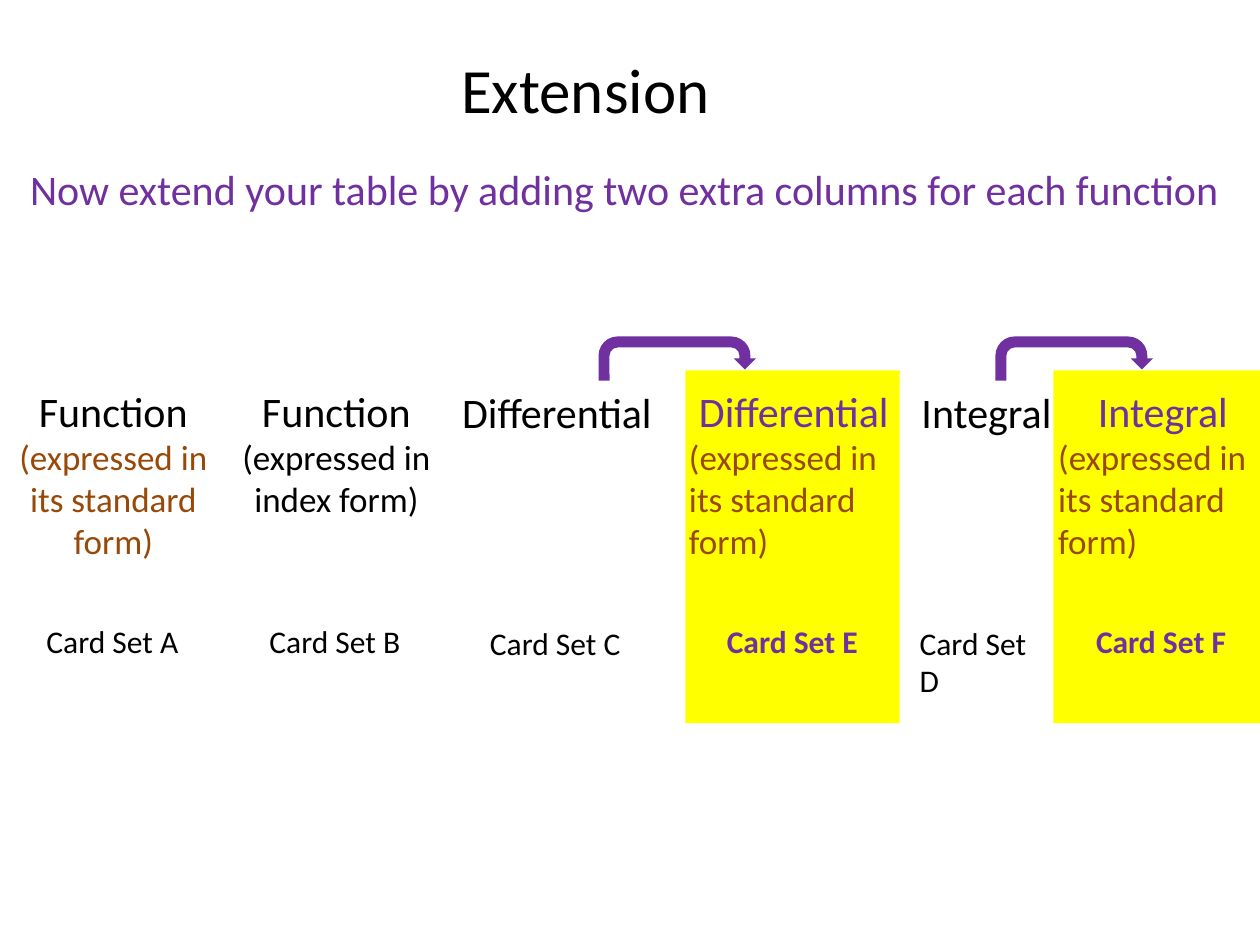
from pptx import Presentation
from pptx.dml.color import RGBColor
from pptx.enum.shapes import MSO_SHAPE
from pptx.enum.text import MSO_ANCHOR, MSO_AUTO_SIZE, PP_ALIGN
from pptx.util import Inches, Pt

RECT, UTURN = MSO_SHAPE.RECTANGLE, MSO_SHAPE.U_TURN_ARROW
LEFT, CENTER = PP_ALIGN.LEFT, PP_ALIGN.CENTER
TOP = MSO_ANCHOR.TOP
NO_FIT, GROW = MSO_AUTO_SIZE.NONE, MSO_AUTO_SIZE.SHAPE_TO_FIT_TEXT
BLACK, PURPLE, BROWN, YELLOW = "000000", "7030A0", "984807", "FFFF00"


def rgb(color):
    return RGBColor.from_string(color)


def write(sp, lines, wrap):
    """Fill a shape with (text, size, colour, alignment, bold) lines."""
    tf = sp.text_frame
    tf.word_wrap = wrap
    tf.vertical_anchor = TOP
    for i, (text, size, color, align, bold) in enumerate(lines):
        p = tf.add_paragraph() if i else tf.paragraphs[0]
        p.text = text
        p.alignment = align
        p.font.name = "Calibri"
        p.font.size = Pt(size)
        p.font.bold = bold
        p.font.color.rgb = rgb(color)
    return tf


prs = Presentation()
prs.slide_width, prs.slide_height = Inches(10), Inches(7.5)
s = prs.slides.add_slide(prs.slide_layouts[5])

# Title
title = s.shapes.title
title.left, title.top = Inches(3.56), Inches(0.35)
title.width, title.height = Inches(2.19), Inches(0.71)
write(title, [("Extension", 36, BLACK, LEFT, False)], False).auto_size = NO_FIT

# Highlights behind the new columns, then arrows leading to them
blocks = [(RECT, x, 2.94, 1.7, 2.8, YELLOW) for x in (5.44, 8.36)]
blocks += [(UTURN, x, 2.67, 1.25, 0.35, PURPLE) for x in (4.75, 7.9)]
for kind, x, y, w, h, color in blocks:
    sp = s.shapes.add_shape(kind, Inches(x), Inches(y), Inches(w), Inches(h))
    sp.shadow.inherit = False
    sp.fill.solid()
    sp.fill.fore_color.rgb = rgb(color)
    sp.line.fill.background()

# Instruction
sp = s.shapes.add_textbox(Inches(0.14), Inches(1.25), Inches(9.72), Inches(0.5))
instruction = "Now extend your table by adding two extra columns for each function"
write(sp, [(instruction, 24, PURPLE, LEFT, False)], False).auto_size = GROW

# Columns: left, top, heading, form, form colour, form alignment, card set, new
STANDARD = "(expressed in its standard form)"
INDEX = "(expressed in index form)"
columns = [
    (-0.03, 3.01, "Function", STANDARD, BROWN, CENTER, "A", False),
    (1.74, 3.01, "Function", INDEX, BLACK, CENTER, "B", False),
    (3.49, 3.02, "Differential", None, None, None, "C", False),
    (5.37, 3.01, "Differential", STANDARD, BROWN, LEFT, "E", True),
    (6.9, 3.02, "Integral", None, None, None, "D", False),
    (8.3, 3.01, "Integral", STANDARD, BROWN, LEFT, "F", True),
]
for x, y, heading, form, form_color, align, card, new in columns:
    color = PURPLE if new else BLACK
    lines = [(heading, 24, color, CENTER, False)]
    height = 0.5
    if form:
        lines.append((form, 20, form_color, align, False))
        height = 1.18 if form == INDEX else 1.51
    sp = s.shapes.add_textbox(Inches(x), Inches(y), Inches(1.86), Inches(height))
    write(sp, lines, True).auto_size = GROW

    # Card set label
    sp = s.shapes.add_textbox(Inches(x + 0.3), Inches(y + 1.88), Inches(1.25), Inches(0.4))
    write(sp, [(f"Card Set {card}", 18, color, LEFT, new)], False).auto_size = GROW

prs.save("out.pptx")
